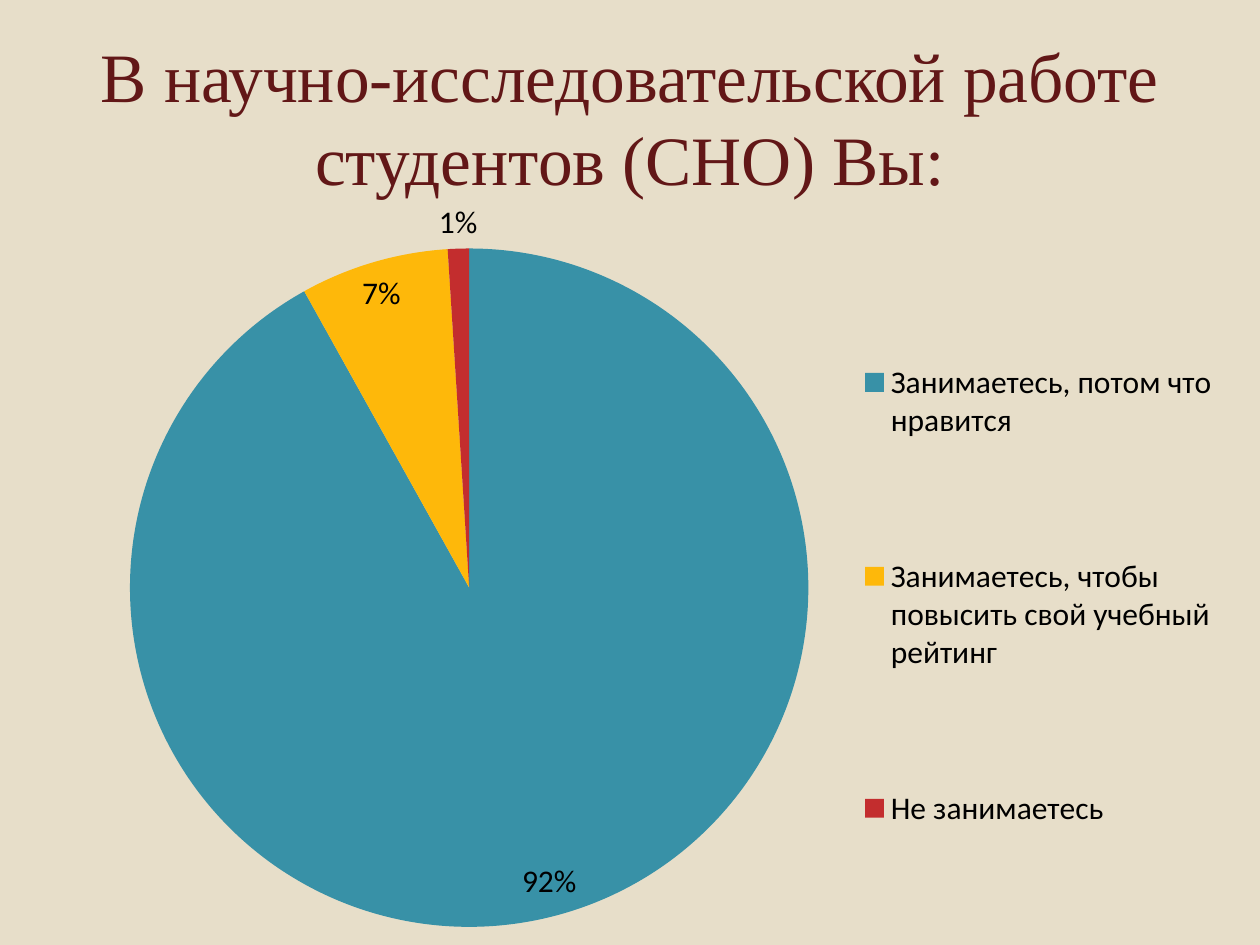
from lxml.etree import SubElement
from pptx import Presentation
from pptx.chart.data import CategoryChartData
from pptx.dml.color import RGBColor
from pptx.enum.chart import XL_CHART_TYPE, XL_LABEL_POSITION, XL_LEGEND_POSITION
from pptx.enum.text import MSO_ANCHOR, PP_ALIGN
from pptx.oxml.ns import qn
from pptx.util import Pt

PX = 914400 // 126
ANSWERS = [
    ("Занимаетесь, потом что нравится", 91, "3891A7"),
    ("Занимаетесь, чтобы повысить свой учебный рейтинг", 7, "FEB80A"),
    ("Не занимаетесь ", 1, "C32D2E"),
]


def px(*lengths):
    return [length * PX for length in lengths]


def paint(color_owner, color):
    color_owner.rgb = RGBColor.from_string(color)


def add_title(slide, text):
    title = slide.shapes.title
    title.left, title.top, title.width, title.height = px(63, 38, 1134, 157)
    frame = title.text_frame
    frame.word_wrap = True
    frame.vertical_anchor = MSO_ANCHOR.MIDDLE
    paragraph = frame.paragraphs[0]
    paragraph.alignment = PP_ALIGN.CENTER
    run = paragraph.add_run()
    run.text = text
    run.font.name = "Times New Roman"
    run.font.size = Pt(39.6)
    paint(run.font.color, "621717")


def place(part, x, y, w, h, inner=False):
    """Give a chart part a manual layout, in fractions of the chart."""
    layout = part.find(qn("c:layout"))
    if layout is None:
        layout = SubElement(part, qn("c:layout"))
    # The layout stands before the overlay flag or the first plot
    follower = part.find(qn("c:overlay"))
    if follower is None:
        follower = part.find(qn("c:pieChart"))
    follower.addprevious(layout)
    manual = SubElement(layout, qn("c:manualLayout"))
    settings = [("layoutTarget", "inner")] if inner else []
    settings += [("xMode", "edge"), ("yMode", "edge"),
                 ("x", x), ("y", y), ("w", w), ("h", h)]
    for tag, value in settings:
        SubElement(manual, qn(f"c:{tag}")).set("val", str(value))


def add_answer_pie(slide):
    answers = CategoryChartData()
    answers.categories = [name for name, _, _ in ANSWERS]
    answers.add_series("Series 1", [share for _, share, _ in ANSWERS])
    chart = slide.shapes.add_chart(
        XL_CHART_TYPE.PIE, *px(84, 185, 1150, 760), answers).chart
    chart.has_title = False
    chart.font.name = "Calibri"
    chart.font.size = Pt(18)
    paint(chart.font.color, "000000")

    # Slices
    pie = chart.plots[0]
    pie.vary_by_categories = True
    for index, (_, _, color) in enumerate(ANSWERS):
        fill = pie.series[0].points[index].format.fill
        fill.solid()
        paint(fill.fore_color, color)

    # Percent labels
    pie.has_data_labels = True
    labels = pie.data_labels
    labels.show_percentage = True
    labels.show_value = False
    labels.number_format = "0%"
    labels.number_format_is_linked = False
    labels.position = XL_LABEL_POSITION.BEST_FIT

    # Legend
    chart.has_legend = True
    legend = chart.legend
    legend.position = XL_LEGEND_POSITION.RIGHT
    legend.include_in_layout = False

    plot_area = chart.element.find(".//" + qn("c:plotArea"))
    legend_area = chart.element.find(".//" + qn("c:legend"))
    place(plot_area, 0.04, 0.08, 0.59, 0.9, inner=True)
    place(legend_area, 0.67, 0.08, 0.32, 0.92)


def main():
    deck = Presentation()
    deck.slide_width, deck.slide_height = px(1260, 945)
    slide = deck.slides.add_slide(deck.slide_layouts[5])
    background = slide.background.fill
    background.solid()
    paint(background.fore_color, "E7DEC9")
    add_title(slide, "В научно-исследовательской работе студентов (СНО) Вы:")
    add_answer_pie(slide)
    deck.save("out.pptx")


if __name__ == "__main__":
    main()
